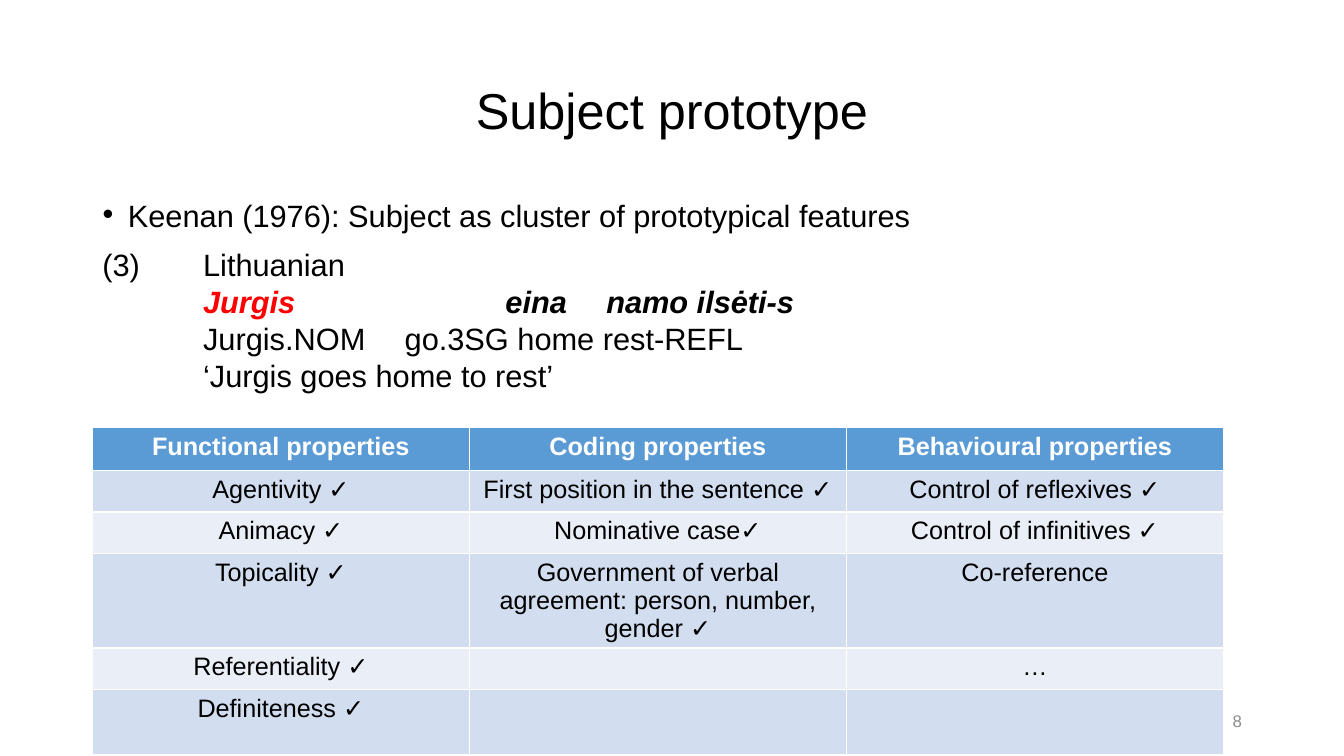
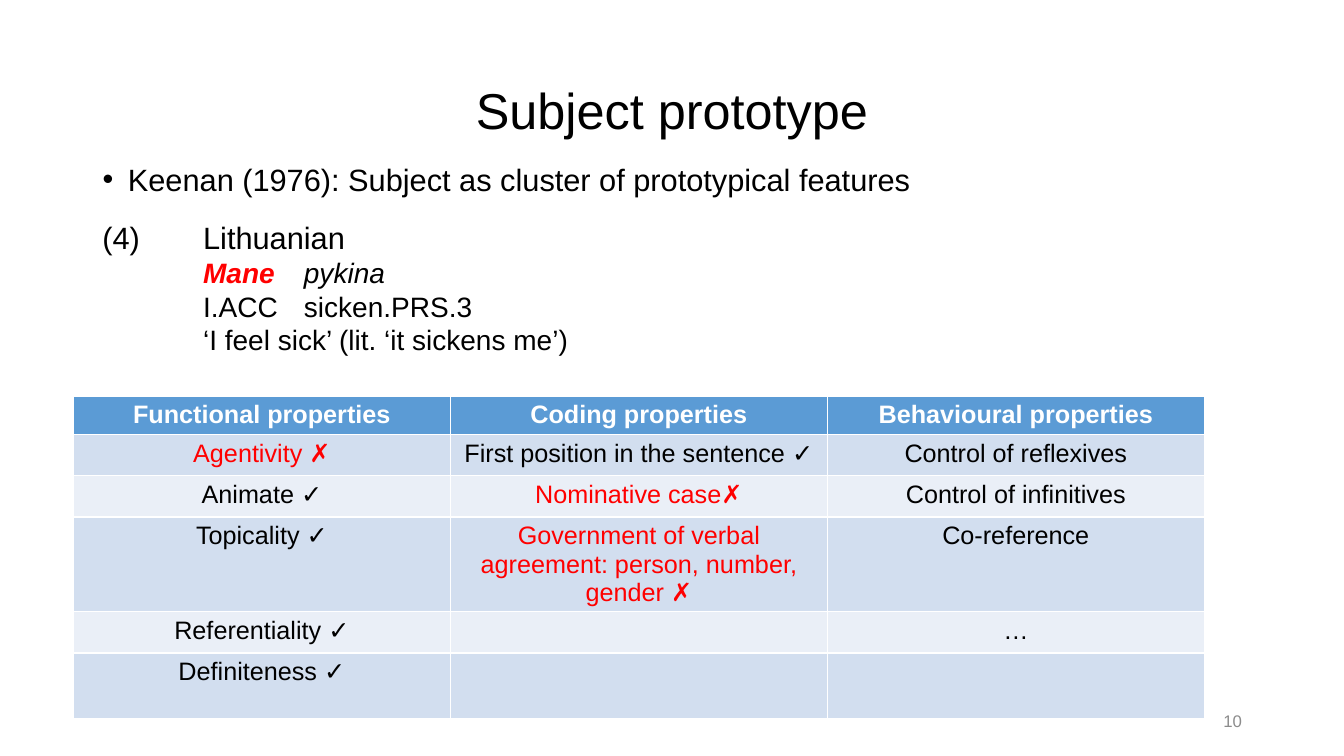
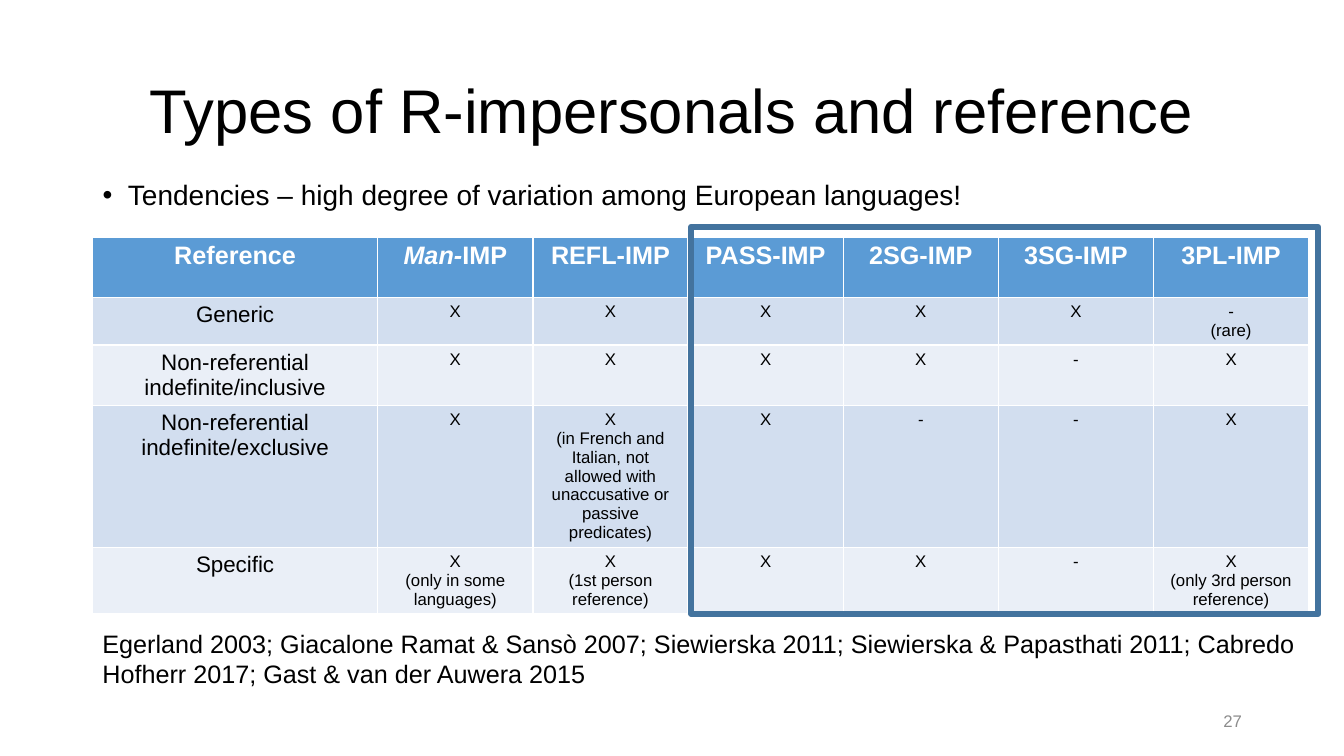
"""Build three slides on subject prototypes and R-impersonals."""
from dataclasses import dataclass
from typing import Optional, Sequence, Union

from lxml.etree import SubElement
from pptx import Presentation
from pptx.dml.color import RGBColor
from pptx.enum.shapes import MSO_SHAPE
from pptx.enum.text import MSO_ANCHOR, MSO_AUTO_SIZE, PP_ALIGN
from pptx.oxml.ns import qn
from pptx.util import Cm, Pt

FONT = "Arial"
COLORS = {
    "text": "000000",
    "violation": "FF0000",
    "page": "8C8C8C",
    "header": "5B9BD5",
    "header_text": "FFFFFF",
    "band_dark": "D2DEEF",
    "band_light": "EAEFF7",
    "frame": "43739E",
}
MARGIN = 2.33
CONTENT_WIDTH = 29.21
TAB = 2.54


@dataclass(frozen=True)
class Run:
    text: str
    bold: Optional[bool] = None
    italic: Optional[bool] = None
    color: Optional[str] = None


@dataclass(frozen=True)
class Line:
    runs: Sequence[Run]
    tabs: Sequence[int] = (1,)
    size: Optional[float] = None


Text = Union[str, Sequence[Line]]


@dataclass(frozen=True)
class Box:
    left: float
    top: float
    width: float
    height: float

    def lengths(self) -> tuple:
        return Cm(self.left), Cm(self.top), Cm(self.width), Cm(self.height)


@dataclass(frozen=True)
class Grid:
    left: float
    top: float
    columns: Sequence[float]
    rows: Sequence[float]
    cells: Sequence[Sequence[Text]]
    label_size: float = 18
    value_size: float = 18


@dataclass(frozen=True)
class Page:
    number: int
    title: str
    point: str
    point_top: float
    grid: Grid
    title_size: float = 36
    point_size: float = 22
    point_spacing: float = 0.7
    example: Sequence[Line] = ()
    example_top: float = 0


def rgb(name: str) -> RGBColor:
    return RGBColor.from_string(COLORS[name])


def write(frame, text: Text, *, size: float, color: str = "text",
          bold: Optional[bool] = None, align=PP_ALIGN.LEFT,
          spacing: Optional[float] = None, before: Optional[float] = None,
          bullet: bool = False) -> None:
    lines = text
    if isinstance(text, str):
        lines = [Line((Run(part),), ()) for part in text.split("\n")]
    for index, line in enumerate(lines):
        paragraph = frame.add_paragraph() if index else frame.paragraphs[0]
        paragraph.alignment = align
        if spacing is not None:
            paragraph.line_spacing = spacing
        if before is not None:
            paragraph.space_before = Pt(before)
        properties = paragraph._p.get_or_add_pPr()
        if bullet:
            indent = Cm(0.64)
            properties.set("marL", str(indent))
            properties.set("indent", str(-indent))
            SubElement(properties, qn("a:buFont"), typeface=FONT)
            SubElement(properties, qn("a:buChar"), char="•")
        if line.tabs:
            stops = SubElement(properties, qn("a:tabLst"))
            for stop in line.tabs:
                SubElement(stops, qn("a:tab"), pos=str(Cm(stop * TAB)), algn="l")
        for part in line.runs:
            run = paragraph.add_run()
            run.text = part.text
            font = run.font
            font.name = FONT
            font.size = Pt(line.size or size)
            font.bold = bold if part.bold is None else part.bold
            font.italic = part.italic
            font.color.rgb = rgb(part.color or color)


def place(shape, box: Box, anchor=MSO_ANCHOR.TOP):
    shape.left, shape.top, shape.width, shape.height = box.lengths()
    frame = shape.text_frame
    frame.word_wrap = True
    frame.auto_size = MSO_AUTO_SIZE.NONE
    frame.vertical_anchor = anchor
    return frame


def add_text(slide, box: Box, text: Text, *, anchor=MSO_ANCHOR.TOP, **style) -> None:
    write(place(slide.shapes.add_textbox(*box.lengths()), box, anchor), text, **style)


def judged(text: str) -> Text:
    """Set the closing mark in italics and colour violations."""
    if text[-1:] not in ("✓", "✗"):
        return text
    color = "violation" if text[-1] == "✗" else "text"
    return [Line((Run(text[:-1], color=color),
                  Run(text[-1], italic=True, color=color)), ())]


def add_grid(slide, grid: Grid) -> None:
    box = Box(grid.left, grid.top, sum(grid.columns), sum(grid.rows))
    table = slide.shapes.add_table(
        len(grid.rows), len(grid.columns), *box.lengths()).table
    for column, width in zip(table.columns, grid.columns):
        column.width = Cm(width)
    for row, height in zip(table.rows, grid.rows):
        row.height = Cm(height)
    for r, entries in enumerate(grid.cells):
        fill = "header" if r == 0 else "band_dark" if r % 2 else "band_light"
        for c, entry in enumerate(entries):
            cell = table.cell(r, c)
            cell.fill.solid()
            cell.fill.fore_color.rgb = rgb(fill)
            if not entry:
                continue
            if r == 0:
                write(cell.text_frame, entry, size=18, bold=True,
                      color="header_text", align=PP_ALIGN.CENTER)
            else:
                write(cell.text_frame, judged(entry), align=PP_ALIGN.CENTER,
                      size=grid.value_size if c else grid.label_size)


def add_page(deck, page: Page):
    slide = deck.slides.add_slide(deck.slide_layouts[1])
    title_frame = place(slide.shapes.title, Box(MARGIN, 1.02, CONTENT_WIDTH, 3.68),
                        MSO_ANCHOR.MIDDLE)
    write(title_frame, page.title, size=page.title_size,
          align=PP_ALIGN.CENTER, spacing=0.9)
    point_frame = place(slide.placeholders[1],
                        Box(MARGIN, page.point_top, CONTENT_WIDTH, 1.5))
    write(point_frame, page.point, size=page.point_size,
          spacing=page.point_spacing, before=10, bullet=True)
    add_grid(slide, page.grid)
    if page.example:
        add_text(slide, Box(MARGIN, page.example_top, 28.02, 4.01),
                 page.example, size=22)
    add_text(slide, Box(23.93, 17.65, 7.62, 1.02), str(page.number), size=12,
             color="page", align=PP_ALIGN.RIGHT, anchor=MSO_ANCHOR.MIDDLE)
    return slide


def add_highlight(slide, box: Box) -> None:
    highlight = slide.shapes.add_shape(MSO_SHAPE.RECTANGLE, *box.lengths())
    highlight.shadow.inherit = False
    highlight.fill.background()
    highlight.line.color.rgb = rgb("frame")
    highlight.line.width = Pt(4.5)


def property_grid(left: float, top: float, header_height: float,
                  *judgements: Sequence[str]) -> Grid:
    headings = ("Functional properties", "Coding properties", "Behavioural properties")
    closing = (("Referentiality ✓", "", "…"), ("Definiteness ✓", "", ""))
    return Grid(left, top, [9.5] * 3, (header_height, 1.04, 1.04, 2.39, 1.04, 1.65),
                (headings, *judgements, *closing))


KEENAN = "Keenan (1976): Subject as cluster of prototypical features"
AGREEMENT = "Government of verbal agreement: person, number, gender "

NOMINATIVE = Page(
    8, "Subject prototype", KEENAN, 5.08,
    property_grid(
        MARGIN, 10.77, 1.09,
        ("Agentivity ✓", "First position in the sentence ✓", "Control of reflexives ✓"),
        ("Animacy ✓", "Nominative case✓", "Control of infinitives ✓"),
        ("Topicality ✓", AGREEMENT + "✓", "Co-reference")),
    example=(
        Line((Run("(3)\tLithuanian"),)),
        Line((Run("\tJurgis", True, True, "violation"),
              Run("\teina\tnamo ilsėti-s", True, True)), (1, 4, 5)),
        Line((Run("\tJurgis.NOM\tgo.3SG home rest-REFL"),), (1, 3)),
        Line((Run("\t‘Jurgis goes home to rest’"),))),
    example_top=6.07)

ACCUSATIVE = Page(
    10, "Subject prototype", KEENAN, 4.19,
    property_grid(
        1.85, 9.98, 0.94,
        ("Agentivity ✗", "First position in the sentence ✓", "Control of reflexives"),
        ("Animate ✓", "Nominative case✗", "Control of infinitives"),
        ("Topicality ✓", AGREEMENT + "✗", "Co-reference")),
    example=(
        Line((Run("(4)\tLithuanian"),)),
        Line((Run("\tMane", True, True, "violation"),
              Run("\tpykina", italic=True)), (1, 2), 20),
        Line((Run("\tI.ACC\tsicken.PRS.3"),), (1, 2), 20),
        Line((Run("\t‘I feel sick’ (lit. ‘it sickens me’)"),), size=20)),
    example_top=5.38)

IMPERSONALS = Page(
    27, "Types of R-impersonals and reference",
    "Tendencies – high degree of variation among European languages!", 4.45,
    Grid(MARGIN, 5.97, [7.19] + [3.91] * 6, (1.52, 1.2, 1.52, 3.58, 1.68), (
        ("Reference", [Line((Run("Man-", italic=True), Run("IMP")), ())],
         "REFL-IMP", "PASS-IMP", "2SG-IMP", "3SG-IMP", "3PL-IMP"),
        ("Generic", "X", "X", "X", "X", "X", "-\n(rare)"),
        ("Non-referential indefinite/inclusive", "X", "X", "X", "X", "-", "X"),
        ("Non-referential indefinite/exclusive", "X",
         "X\n(in French and Italian, not allowed with unaccusative or passive predicates)",
         "X", "-", "-", "X"),
        ("Specific", "X\n(only in some languages)", "X\n(1st person reference)",
         "X", "X", "-", "X\n(only 3rd person reference)")),
        label_size=16, value_size=12),
    title_size=44, point_size=20, point_spacing=0.9)

REFERENCES = ("Egerland 2003; Giacalone Ramat & Sansò 2007; Siewierska 2011; "
              "Siewierska & Papasthati 2011; Cabredo Hofherr 2017; "
              "Gast & van der Auwera 2015")


def main() -> None:
    deck = Presentation()
    deck.slide_width, deck.slide_height = Cm(33.87), Cm(19.05)
    for page in (NOMINATIVE, ACCUSATIVE):
        add_page(deck, page)
    impersonals = add_page(deck, IMPERSONALS)
    add_text(impersonals, Box(MARGIN, 15.7, 30.63, 1.8), REFERENCES, size=18)
    add_highlight(impersonals, Box(17.42, 5.72, 15.8, 9.75))
    deck.save("out.pptx")


if __name__ == "__main__":
    main()
